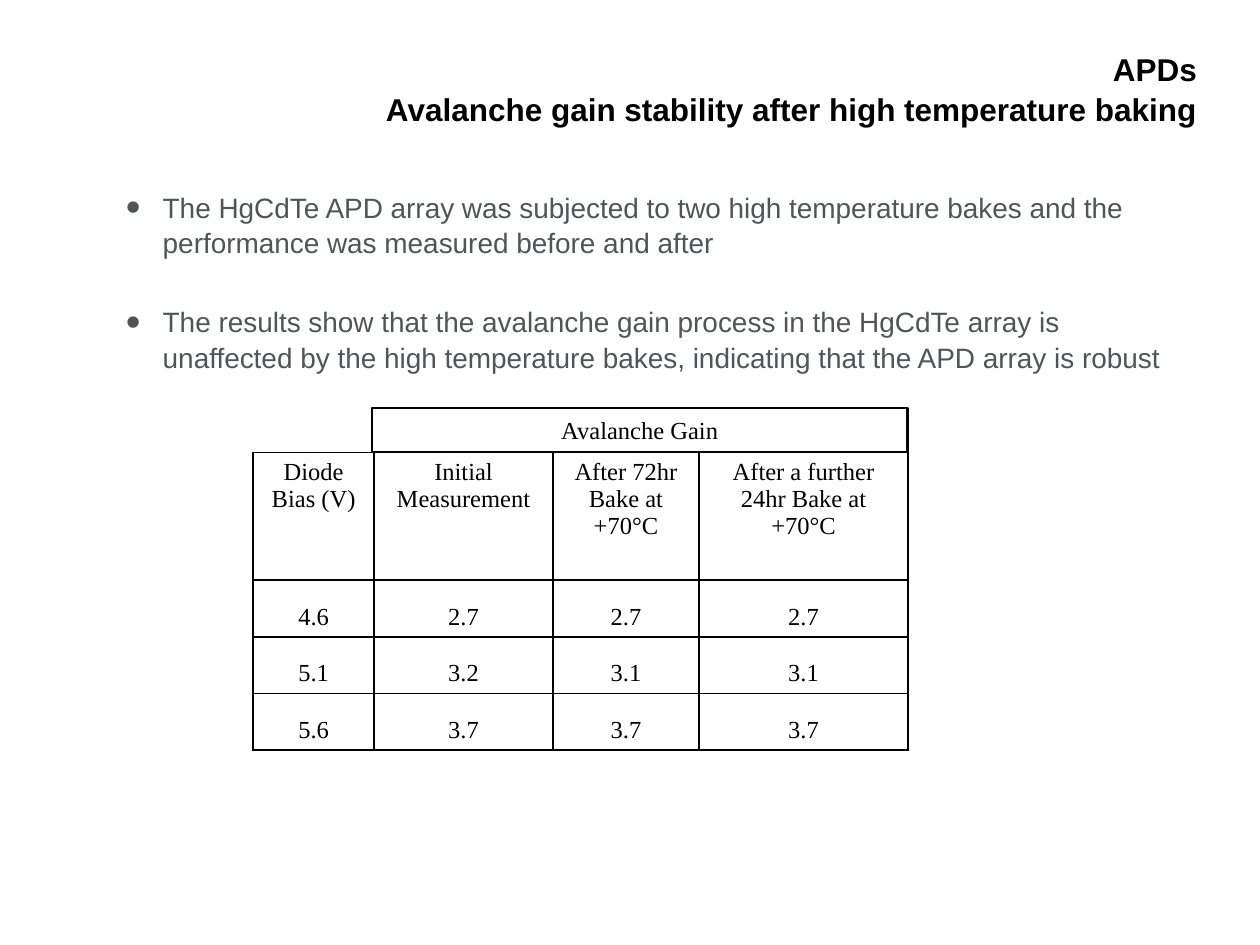
import pptx
import pptx.dml.color
import pptx.enum.shapes
import pptx.enum.text
import pptx.oxml.ns
import pptx.util
from lxml import etree

Pt = pptx.util.Pt
ALIGN = pptx.enum.text.PP_ALIGN
ANCHOR = pptx.enum.text.MSO_ANCHOR
qn = pptx.oxml.ns.qn


def color(value):
    return pptx.dml.color.RGBColor.from_string(value)


class SlideBuilder:
    sans = "Arial"
    serif = "Times New Roman"
    black = "000000"
    gray = "50555A"

    def __init__(self, deck):
        self.page = deck.slides.add_slide(deck.slide_layouts[5])

    def format_text(self, frame, font, size, shade, align, bold=False):
        for para in frame.paragraphs:
            para.alignment = align
            for span in para.runs:
                span.font.name = font
                span.font.size = Pt(size)
                span.font.bold = bold
                span.font.color.rgb = color(shade)

    def set_margins(self, frame, left, top, right, bottom):
        frame.margin_left, frame.margin_top = Pt(left), Pt(top)
        frame.margin_right, frame.margin_bottom = Pt(right), Pt(bottom)

    def title(self, text, left, top, width, height):
        box = self.page.shapes.title
        box.left, box.top, box.width, box.height = Pt(left), Pt(top), Pt(width), Pt(height)
        frame = box.text_frame
        frame.text = text
        frame.word_wrap = True
        frame.auto_size = pptx.enum.text.MSO_AUTO_SIZE.NONE
        frame.vertical_anchor = ANCHOR.TOP
        self.set_margins(frame, 7.2, 3.6, 0, 3.6)
        self.format_text(frame, self.sans, 18, self.black, ALIGN.RIGHT, True)
        for para in frame.paragraphs:
            para.line_spacing = 1.05
            para.space_before = Pt(0)

    def bullets(self, items, left, top, width, height):
        box = self.page.shapes.add_textbox(Pt(left), Pt(top), Pt(width), Pt(height))
        frame = box.text_frame
        frame.text = "\n".join(items)
        frame.word_wrap = True
        self.set_margins(frame, 0, 0, 0, 0)
        for index, para in enumerate(frame.paragraphs):
            properties = para._p.get_or_add_pPr()
            properties.set("marL", str(Pt(21)))
            properties.set("indent", str(-Pt(21)))
            etree.SubElement(properties, qn("a:buSzPct"), val="150000")
            etree.SubElement(properties, qn("a:buFont"), typeface=self.sans)
            etree.SubElement(properties, qn("a:buChar"), char="•")
            para.line_spacing = 1.05
            para.space_before = Pt(25 if index else 0)
        self.format_text(frame, self.sans, 16, self.gray, ALIGN.LEFT)

    def cell_borders(self, cell):
        properties = cell._tc.get_or_add_tcPr()
        for side in ("a:lnL", "a:lnR", "a:lnT", "a:lnB"):
            line = etree.SubElement(properties, qn(side), w=str(Pt(1)))
            fill = etree.SubElement(line, qn("a:solidFill"))
            etree.SubElement(fill, qn("a:srgbClr"), val=self.black)

    def table(self, rows, left, top, widths, heights):
        table = self.page.shapes.add_table(
            len(rows), len(widths), Pt(left), Pt(top), Pt(sum(widths)), Pt(sum(heights))
        ).table
        table.first_row = table.horz_banding = False
        for column, width in zip(table.columns, widths):
            column.width = Pt(width)
        for row_index, (values, height) in enumerate(zip(rows, heights)):
            table.rows[row_index].height = Pt(height)
            for column_index, value in enumerate(values):
                cell = table.cell(row_index, column_index)
                cell.text = value
                cell.vertical_anchor = ANCHOR.BOTTOM if row_index else ANCHOR.TOP
                self.cell_borders(cell)
                cell.fill.background()
                self.format_text(cell.text_frame, self.serif, 14, self.black, ALIGN.CENTER)

    def heading_box(self, text, left, top, width, height):
        box = self.page.shapes.add_shape(
            pptx.enum.shapes.MSO_SHAPE.RECTANGLE, Pt(left), Pt(top), Pt(width), Pt(height)
        )
        box.shadow.inherit = False
        box.fill.background()
        box.line.color.rgb = color(self.black)
        box.line.width = Pt(1.25)
        box.text_frame.text = text
        box.text_frame.vertical_anchor = ANCHOR.MIDDLE
        self.format_text(box.text_frame, self.serif, 14, self.black, ALIGN.CENTER)


def main():
    deck = pptx.Presentation()
    deck.slide_width, deck.slide_height = Pt(720), Pt(540)
    builder = SlideBuilder(deck)
    builder.title(
        "APDs\nAvalanche gain stability after high temperature baking", 167, 23.8, 517, 72.7
    )
    builder.bullets(
        [
            "The HgCdTe APD array was subjected to two high temperature bakes "
            "and the performance was measured before and after",
            "The results show that the avalanche gain process in the HgCdTe array is "
            "unaffected by the high temperature bakes, indicating that the APD array is robust",
        ],
        72, 108, 612, 104.4,
    )
    builder.table(
        [
            ["Diode Bias (V)", "Initial Measurement", "After 72hr Bake at +70°C",
             "After a further 24hr Bake at +70°C"],
            ["4.6", "2.7", "2.7", "2.7"],
            ["5.1", "3.2", "3.1", "3.1"],
            ["5.6", "3.7", "3.7", "3.7"],
        ],
        144.7, 258.5, [69.1, 102.2, 83.5, 119.5], [73, 32.4, 32.4, 32.4],
    )
    builder.heading_box("Avalanche Gain", 212.6, 233.2, 306, 25.2)
    deck.save("out.pptx")


if __name__ == "__main__":
    main()
